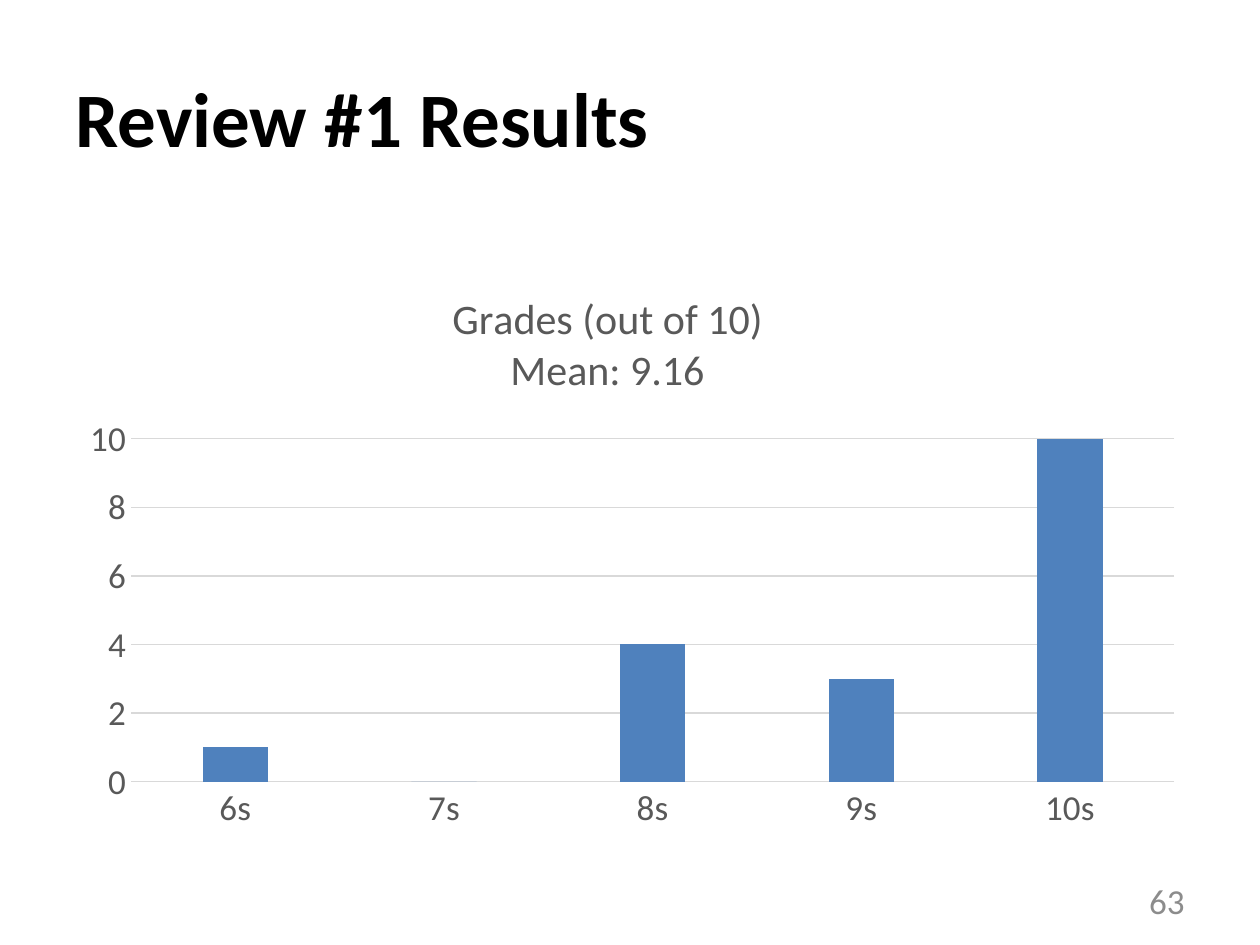
from lxml import etree
from pptx import Presentation
from pptx.chart.data import CategoryChartData
from pptx.dml.color import RGBColor
from pptx.enum.chart import XL_CHART_TYPE, XL_TICK_MARK
from pptx.enum.text import MSO_ANCHOR, PP_ALIGN
from pptx.oxml.ns import qn
from pptx.util import Pt

COLUMN = XL_CHART_TYPE.COLUMN_CLUSTERED
NO_TICK = XL_TICK_MARK.NONE
MIDDLE = MSO_ANCHOR.MIDDLE
LEFT, CENTER, RIGHT = PP_ALIGN.LEFT, PP_ALIGN.CENTER, PP_ALIGN.RIGHT
FONT = "Calibri"
COLORS = {"title": "000000", "number": "8C8C8C", "label": "595959",
          "grid": "D9D9D9", "bar": "4F81BD"}


def color(name):
    return RGBColor.from_string(COLORS[name])


def format_font(font, size, name, bold=False):
    font.name, font.size, font.bold = FONT, Pt(size), bold
    font.color.rgb = color(name)


def add_text(tf, text, size=20, fill="label", bold=False, align=LEFT):
    for i, line in enumerate(text.split("\n")):
        p = tf.add_paragraph() if i else tf.paragraphs[0]
        p.alignment = align
        r = p.add_run()
        r.text = line
        format_font(r.font, size, fill, bold)


def format_line(line):
    line.color.rgb = color("grid")
    line.width = Pt(0.75)


def set_layout(parent, index, **values):
    for old in parent.findall(qn("c:layout")):
        parent.remove(old)
    layout = etree.Element(qn("c:layout"))
    manual = etree.SubElement(layout, qn("c:manualLayout"))
    for tag, value in values.items():
        etree.SubElement(manual, qn(f"c:{tag}")).set("val", str(value))
    parent.insert(index, layout)


def place_title(s, x, y, w, h):
    sp = s.shapes.title
    sp.left, sp.top, sp.width, sp.height = Pt(x), Pt(y), Pt(w), Pt(h)
    tf = sp.text_frame
    tf.vertical_anchor = MIDDLE
    add_text(tf, "Review #1 Results", size=44, fill="title", bold=True)


def place_number(s, x, y, w, h):
    tf = s.shapes.add_textbox(Pt(x), Pt(y), Pt(w), Pt(h)).text_frame
    tf.word_wrap = True
    tf.vertical_anchor = MIDDLE
    add_text(tf, "63", fill="number", align=RIGHT)


def place_chart(s, x, y, w, h):
    data = CategoryChartData()
    data.categories = ["6s", "7s", "8s", "9s", "10s"]
    data.add_series("Series 1", [1, 0, 4, 3, 10])
    chart = s.shapes.add_chart(COLUMN, Pt(x), Pt(y), Pt(w), Pt(h), data).chart
    format_font(chart.font, 20, "title")
    chart.has_legend = False
    chart.has_title = True
    title = chart.chart_title
    add_text(title.text_frame, "Grades (out of 10)\nMean: 9.16",
             size=24, align=CENTER)
    title.include_in_layout = False

    plot = chart.plots[0]
    plot.gap_width, plot.overlap = 219, -27
    plot.vary_by_categories = False
    fill = plot.series[0].format.fill
    fill.solid()
    fill.fore_color.rgb = color("bar")

    for axis in (chart.category_axis, chart.value_axis):
        axis.major_tick_mark = axis.minor_tick_mark = NO_TICK
        format_font(axis.tick_labels.font, 20, "label")
    format_line(chart.category_axis.format.line)
    values = chart.value_axis
    values.minimum_scale, values.maximum_scale, values.major_unit = 0, 10, 2
    values.format.line.fill.background()
    values.has_major_gridlines = True
    format_line(values.major_gridlines.format.line)

    root = chart.element if hasattr(chart, "element") else chart._chartSpace
    set_layout(root.find(".//" + qn("c:title")), 1,
               xMode="edge", yMode="edge", x=0.34, y=0.11)
    set_layout(root.find(".//" + qn("c:plotArea")), 0,
               layoutTarget="inner", xMode="edge", yMode="edge",
               x=0.06, y=0.35, w=0.92, h=0.55)


def main():
    prs = Presentation()
    prs.slide_width, prs.slide_height = Pt(720), Pt(540)
    s = prs.slides.add_slide(prs.slide_layouts[5])
    place_title(s, 36, 21.6, 648, 90)
    place_number(s, 516.24, 500.4, 167.76, 28.8)
    place_chart(s, 36, 126, 648, 356.4)
    prs.save("out.pptx")


if __name__ == "__main__":
    main()
